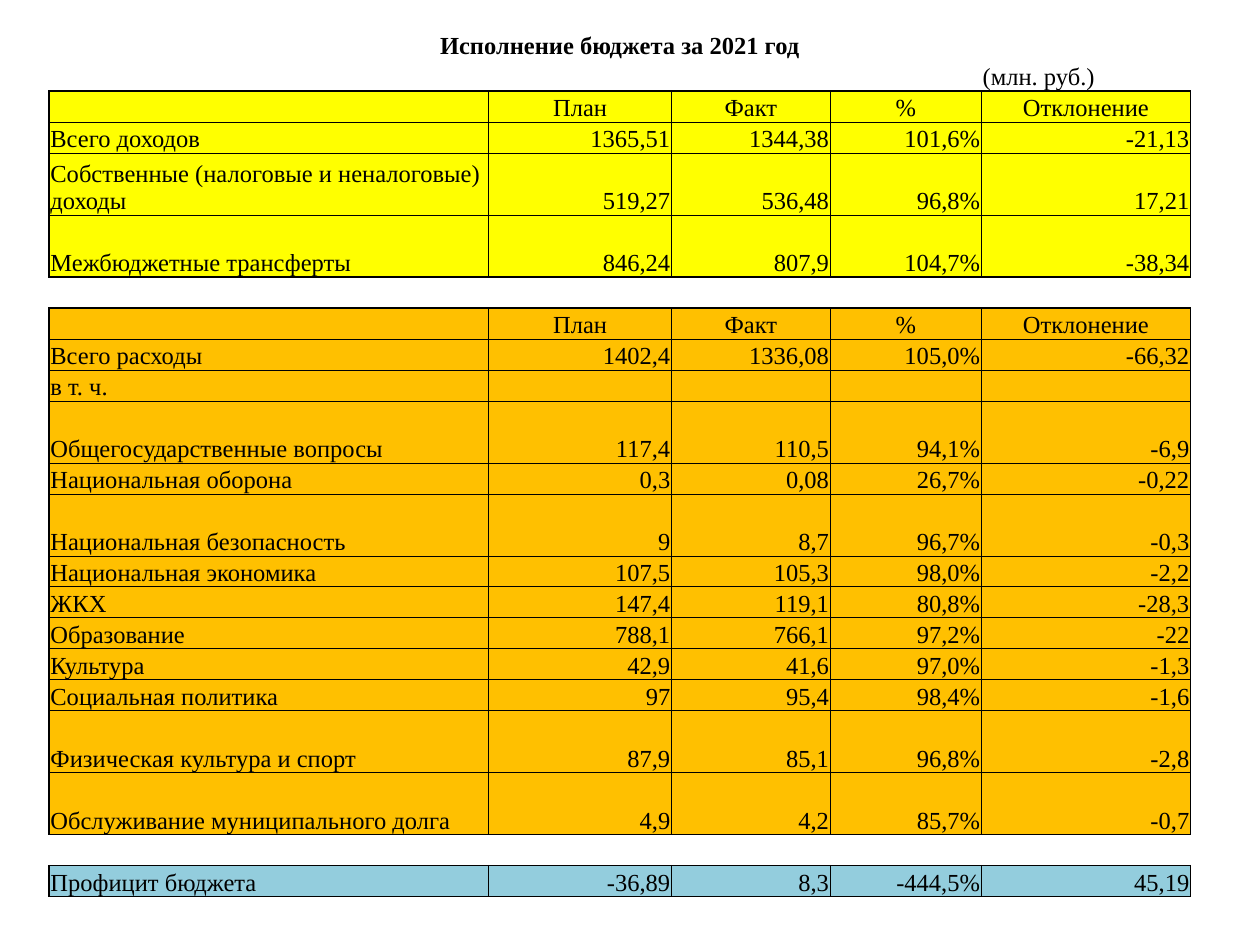
from lxml import etree
from pptx import Presentation
from pptx import util as u
from pptx.dml.color import RGBColor
from pptx.enum import text
from pptx.oxml.ns import qn

FONT, SIZE, INK = "Times New Roman", 14, "000000"
THIN, THICK = 0.5, 1
LEFT, MID, RIGHT = text.PP_ALIGN.LEFT, text.PP_ALIGN.CENTER, text.PP_ALIGN.RIGHT
COLS = [3.49, 1.45, 1.26, 1.2, 1.66]
HEAD = ["", "План", "Факт", "%", "Отклонение"]
TALL = {"Собственные (налоговые и неналоговые) доходы", "Межбюджетные трансферты",
        "Общегосударственные вопросы", "Национальная безопасность",
        "Физическая культура и спорт", "Обслуживание муниципального долга"}
INCOME = [
    HEAD,
    ["Всего доходов", "1365,51", "1344,38", "101,6%", "-21,13"],
    ["Собственные (налоговые и неналоговые) доходы", "519,27", "536,48", "96,8%", "17,21"],
    ["Межбюджетные трансферты", "846,24", "807,9", "104,7%", "-38,34"],
]
COSTS = [
    HEAD,
    ["Всего расходы", "1402,4", "1336,08", "105,0%", "-66,32"],
    ["в т. ч.", "", "", "", ""],
    ["Общегосударственные вопросы", "117,4", "110,5", "94,1%", "-6,9"],
    ["Национальная оборона", "0,3", "0,08", "26,7%", "-0,22"],
    ["Национальная безопасность", "9", "8,7", "96,7%", "-0,3"],
    ["Национальная экономика", "107,5", "105,3", "98,0%", "-2,2"],
    ["ЖКХ", "147,4", "119,1", "80,8%", "-28,3"],
    ["Образование", "788,1", "766,1", "97,2%", "-22"],
    ["Культура", "42,9", "41,6", "97,0%", "-1,3"],
    ["Социальная политика", "97", "95,4", "98,4%", "-1,6"],
    ["Физическая культура и спорт", "87,9", "85,1", "96,8%", "-2,8"],
    ["Обслуживание муниципального долга", "4,9", "4,2", "85,7%", "-0,7"],
]
RESULT = [["Профицит бюджета", "-36,89", "8,3", "-444,5%", "45,19"]]
GAP = [[""] * 5]
TITLE = [["Исполнение бюджета за 2021 год", "", "", "", ""]]
UNIT = [["", "", "", "", "(млн. руб.)"]]
BANDS = [(None, TITLE), (None, UNIT), ("FFFF00", INCOME), (None, GAP),
         ("FFC000", COSTS), (None, GAP), ("93CDDD", RESULT)]


def color(code):
    return RGBColor.from_string(code)


def edge(cell, widths):
    """Draw the cell's borders; widths holds points for L, R, T, B, 0 for none."""
    props = cell._tc.get_or_add_tcPr()
    for side, width in zip("LRTB", widths):
        line = etree.SubElement(props, qn(f"a:ln{side}"), w=str(u.Pt(width)))
        if width:
            fill = etree.SubElement(line, qn("a:solidFill"))
            etree.SubElement(fill, qn("a:srgbClr"), val=INK)
        else:
            etree.SubElement(line, qn("a:noFill"))


def write(cell, words, align, bold=False):
    cell.margin_left = cell.margin_right = cell.margin_top = u.Inches(0.01)
    cell.margin_bottom = 0
    cell.vertical_anchor = text.MSO_ANCHOR.BOTTOM
    para = cell.text_frame.paragraphs[0]
    para.alignment = align
    if words:
        run = para.add_run()
        run.text = words
        run.font.name, run.font.size, run.font.bold = FONT, u.Pt(SIZE), bold
        run.font.color.rgb = color(INK)
    else:
        # An empty cell must not stretch its row.
        etree.SubElement(para._p, qn("a:endParaRPr"), sz=str(SIZE * 100))


def band(table, top, hue, rows):
    """Fill one block of rows, framed by a thick line if it has a colour."""
    last = len(COLS) - 1
    for r, row in enumerate(rows):
        for c, words in enumerate(row):
            cell = table.cell(top + r, c)
            if hue:
                edge(cell, [THICK if c == 0 else THIN,
                            THICK if c == last else THIN,
                            THICK if r == 0 else THIN,
                            THICK if r == len(rows) - 1 else THIN])
                cell.fill.solid()
                cell.fill.fore_color.rgb = color(hue)
            else:
                edge(cell, [0, 0, THICK if rows is GAP else 0,
                            0 if rows is TITLE else THICK])
                cell.fill.background()
            if row is HEAD or rows is TITLE:
                align = MID
            else:
                align = RIGHT if hue and c else LEFT
            write(cell, words, align, bold=rows is TITLE)


def budget(slide, left, top, width, height):
    rows = [row for _, part in BANDS for row in part]
    units = [2 if row[0] in TALL else 1 for row in rows]
    table = slide.shapes.add_table(len(rows), len(COLS), left, top, width, height).table
    table.first_row = table.horz_banding = False
    for col, size in zip(table.columns, COLS):
        col.width = int(width * size / sum(COLS))
    for row, unit in zip(table.rows, units):
        row.height = int(height * unit / sum(units))
    start = 0
    for hue, part in BANDS:
        band(table, start, hue, part)
        start += len(part)
    table.cell(0, 0).merge(table.cell(0, len(COLS) - 1))


def main():
    deck = Presentation()
    deck.slide_width, deck.slide_height = u.Inches(10), u.Inches(7.5)
    slide = deck.slides.add_slide(deck.slide_layouts[6])
    budget(slide, u.Inches(0.39), u.Inches(0.23), u.Inches(9.06), u.Inches(6.88))
    deck.save("out.pptx")


if __name__ == "__main__":
    main()
